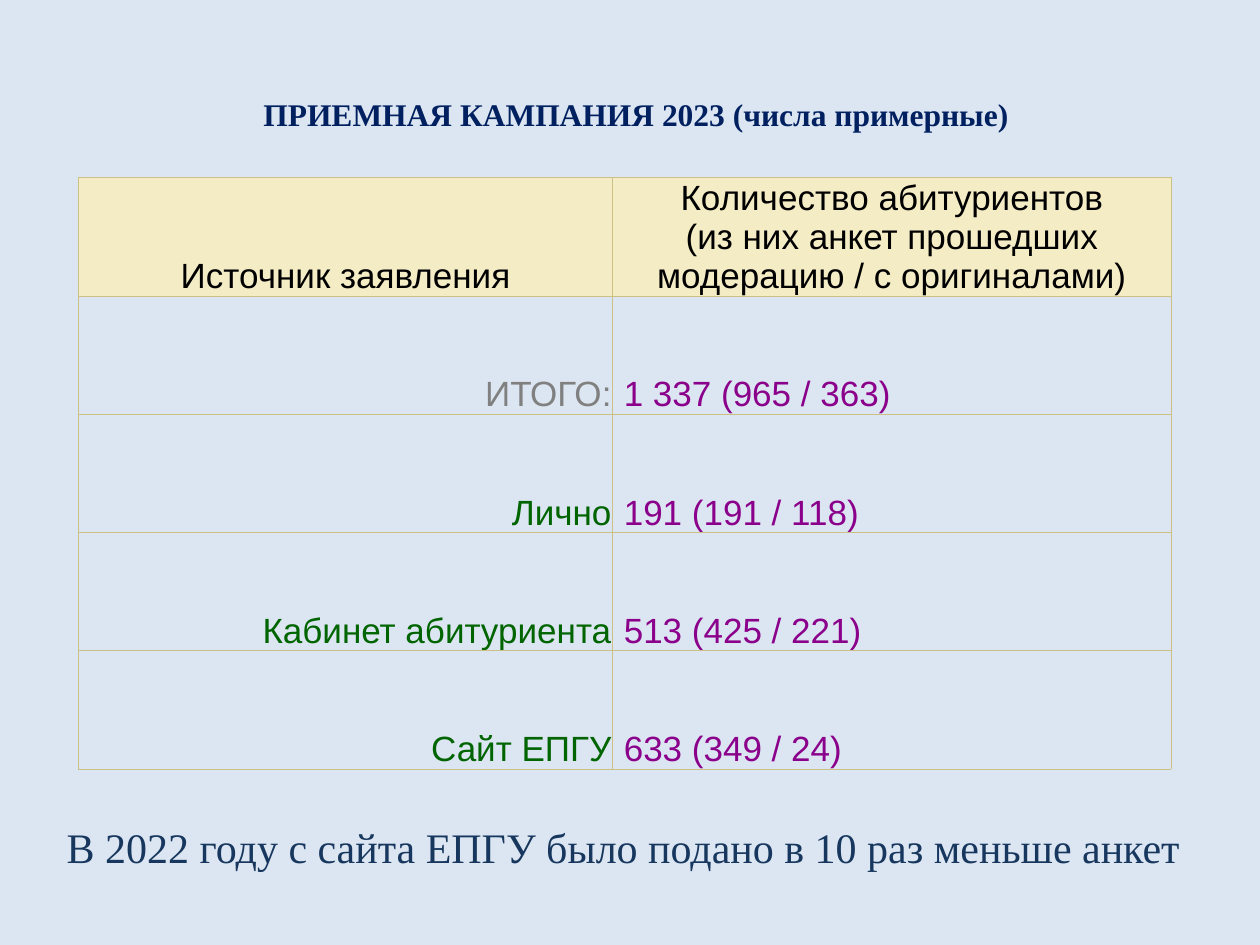
import pptx
import pptx.util
import pptx.dml.color
import pptx.enum.text
import pptx.oxml
import pptx.oxml.ns

Pt = pptx.util.Pt
RGBColor = pptx.dml.color.RGBColor
Align = pptx.enum.text.PP_ALIGN
Anchor = pptx.enum.text.MSO_ANCHOR

BACKGROUND = RGBColor(0xDC, 0xE6, 0xF2)
HEADER_FILL = RGBColor(0xF4, 0xEC, 0xC5)
BORDER = RGBColor(0xCC, 0xC0, 0x85)
NAVY = RGBColor(0x00, 0x20, 0x60)
BLUE = RGBColor(0x17, 0x37, 0x5E)
BLACK = RGBColor(0x00, 0x00, 0x00)
GRAY = RGBColor(0x80, 0x80, 0x80)
GREEN = RGBColor(0x00, 0x64, 0x00)
PURPLE = RGBColor(0x8B, 0x00, 0x8B)


def add_text(para, text, font, size, color, align, bold=False):
    para.alignment = align
    span = para.add_run()
    span.text = text
    span.font.name = font
    span.font.size = Pt(size)
    span.font.bold = bold
    span.font.color.rgb = color


def add_borders(cell):
    props = cell._tc.get_or_add_tcPr()
    for index, side in enumerate(("lnL", "lnR", "lnT", "lnB")):
        props.insert(index, pptx.oxml.parse_xml(
            f'<a:{side} {pptx.oxml.ns.nsdecls("a")} w="{Pt(0.5)}"><a:solidFill>'
            f'<a:srgbClr val="{BORDER}"/></a:solidFill></a:{side}>'))


deck = pptx.Presentation()
deck.slide_width, deck.slide_height = Pt(720), Pt(540)
page = deck.slides.add_slide(deck.slide_layouts[5])
page.background.fill.solid()
page.background.fill.fore_color.rgb = BACKGROUND

# Title
title = page.shapes.title
title.left, title.top, title.width, title.height = Pt(143.3), Pt(50.4), Pt(445), Pt(29)
title.text_frame.word_wrap = False
title.text_frame.auto_size = pptx.enum.text.MSO_AUTO_SIZE.NONE
title.text_frame.vertical_anchor = Anchor.TOP
add_text(title.text_frame.paragraphs[0], "ПРИЕМНАЯ КАМПАНИЯ 2023 (числа примерные)",
         "Times New Roman", 18, NAVY, Align.LEFT, bold=True)

# Table of application sources: text and colour for each of the two columns
rows = [
    ("Источник заявления", BLACK,
     "Количество абитуриентов\n(из них анкет прошедших модерацию / с оригиналами)", BLACK),
    ("ИТОГО:", GRAY, " 1 337 (965 / 363)", PURPLE),
    ("Лично", GREEN, " 191 (191 / 118)", PURPLE),
    ("Кабинет абитуриента", GREEN, " 513 (425 / 221)", PURPLE),
    ("Сайт ЕПГУ", GREEN, " 633 (349 / 24)", PURPLE),
]
table = page.shapes.add_table(len(rows), 2, Pt(44.8), Pt(101.4), Pt(624.4), Pt(338)).table
table.horz_banding = False
table.columns[0].width, table.columns[1].width = Pt(305.4), Pt(319)

for r, (source, source_color, count, count_color) in enumerate(rows):
    table.rows[r].height = Pt(67.6)
    for c, (text, color) in enumerate(((source, source_color), (count, count_color))):
        cell = table.cell(r, c)
        cell.vertical_anchor = Anchor.BOTTOM
        cell.margin_left = Pt(13.5) if color == GREEN else Pt(0.75)
        cell.margin_right = cell.margin_top = Pt(0.75)
        cell.margin_bottom = 0
        if r == 0:
            cell.fill.solid()
            cell.fill.fore_color.rgb = HEADER_FILL
            align = Align.CENTER
        else:
            cell.fill.background()
            align = Align.RIGHT if c == 0 else Align.LEFT
        add_borders(cell)
        for i, line in enumerate(text.split("\n")):
            frame = cell.text_frame
            para = frame.add_paragraph() if i else frame.paragraphs[0]
            add_text(para, line, "Arial", 20, color, align)

# Closing remark
remark = page.shapes.add_textbox(Pt(31), Pt(466), Pt(669), Pt(36))
remark.text_frame.word_wrap = True
add_text(remark.text_frame.paragraphs[0],
         "В 2022 году с сайта ЕПГУ было подано в 10 раз меньше анкет",
         "Times New Roman", 24, BLUE, Align.LEFT)

deck.save("out.pptx")
